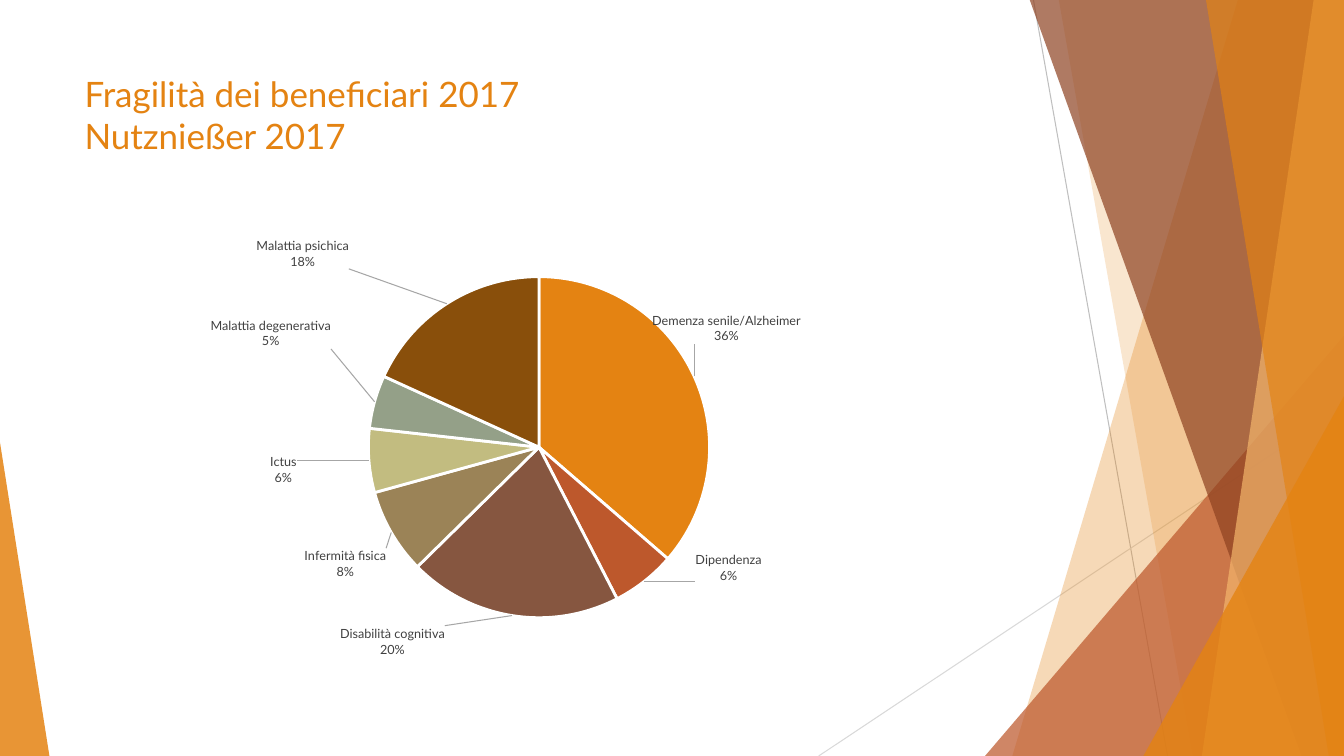
from dataclasses import dataclass

import pptx
import pptx.chart.data
import pptx.chart.series
import pptx.dml.color
import pptx.enum.chart
import pptx.enum.shapes
import pptx.enum.text
import pptx.oxml
import pptx.oxml.ns
import pptx.shapes.autoshape
import pptx.slide
import pptx.util
from pptx.util import Inches

W, H = 13.33, 7.5
FONT = "Lato"
ORANGE = "E48312"
TITLE = "Fragilità dei beneficiari 2017\vNutznießer 2017"
CHART_NS = pptx.oxml.ns.nsdecls("c", "a")


@dataclass
class Line:
    x1: float
    y1: float
    x2: float
    y2: float
    color: str


@dataclass
class Band:
    top_x: float
    bottom_x: float
    color: str
    opacity: int


@dataclass
class Triangle:
    left: float
    top: float
    width: float
    apex: float
    color: str
    opacity: int


@dataclass
class Slice:
    name: str
    value: int
    color: str
    dx: float
    dy: float


DECOR = [
    Line(10.25, 0, 11.58, H, "BFBFBF"),
    Line(W, 4.03, 8.12, H, "D9D9D9"),
    Band(12.28, 10.04, ORANGE, 30),
    Band(10.5, 11.83, ORANGE, 20),
    Triangle(9.77, 3.33, 3.56, 1, "BD582C", 72),
    Band(10.21, 12.91, "8E4221", 70),
    Band(13.03, 11.92, "F3B56C", 70),
    Band(11.96, 13.18, ORANGE, 65),
    Triangle(11.34, 3.93, 1.99, 1, ORANGE, 80),
    Triangle(0, 4.39, 0.49, 0, ORANGE, 85),
]

SLICES = [
    Slice("Demenza senile/Alzheimer", 36, ORANGE, -0.05, -0.07),
    Slice("Dipendenza", 6, "BD582C", 0.05, -0.08),
    Slice("Disabilità cognitiva", 20, "865640", -0.07, 0.01),
    Slice("Infermità fisica", 8, "9B8357", 0, 0.03),
    Slice("Ictus", 6, "C2BC80", -0.07, 0.02),
    Slice("Malattia degenerativa", 5, "94A088", -0.04, -0.12),
    Slice("Malattia psichica", 18, "894F0B", -0.1, -0.07),
]


def rgb(color: str) -> pptx.dml.color.RGBColor:
    return pptx.dml.color.RGBColor.from_string(color)


def xml(text: str):
    return pptx.oxml.parse_xml(text)


def set_font(font, size: float, color: str) -> None:
    font.name = FONT
    font.size = pptx.util.Pt(size)
    font.color.rgb = rgb(color)


def paint(sp: pptx.shapes.autoshape.Shape, color: str, opacity: int) -> None:
    sp.shadow.inherit = False
    sp.fill.solid()
    sp.fill.fore_color.rgb = rgb(color)
    sp.line.fill.background()
    alpha = f'<a:alpha {pptx.oxml.ns.nsdecls("a")} val="{opacity * 1000}"/>'
    sp._element.spPr.xpath("./a:solidFill/a:srgbClr")[0].append(xml(alpha))


def draw_line(s: pptx.slide.Slide, line: Line) -> None:
    cx = s.shapes.add_connector(
        pptx.enum.shapes.MSO_CONNECTOR.STRAIGHT,
        Inches(line.x1), Inches(line.y1), Inches(line.x2), Inches(line.y2))
    cx.line.color.rgb = rgb(line.color)
    cx.line.width = pptx.util.Pt(0.75)
    cx._element.spPr.append(xml(f'<a:effectLst {pptx.oxml.ns.nsdecls("a")}/>'))


def draw_band(s: pptx.slide.Slide, band: Band) -> None:
    top = Inches(-0.01)
    fb = s.shapes.build_freeform(Inches(band.top_x), top)
    fb.add_line_segments([(Inches(W), top), (Inches(W), Inches(H)),
                          (Inches(band.bottom_x), Inches(H))], close=True)
    paint(fb.convert_to_shape(), band.color, band.opacity)


def draw_triangle(s: pptx.slide.Slide, tri: Triangle) -> None:
    sp = s.shapes.add_shape(
        pptx.enum.shapes.MSO_SHAPE.ISOSCELES_TRIANGLE,
        Inches(tri.left), Inches(tri.top), Inches(tri.width), Inches(H - tri.top))
    sp.adjustments[0] = tri.apex
    paint(sp, tri.color, tri.opacity)


def draw_title(s: pptx.slide.Slide) -> None:
    tf = s.shapes.add_textbox(Inches(0.74), Inches(0.67), Inches(9.4), Inches(1.44)).text_frame
    tf.word_wrap = True
    tf.vertical_anchor = pptx.enum.text.MSO_ANCHOR.TOP
    tf.text = TITLE
    for r in tf.paragraphs[0].runs:
        set_font(r.font, 25, ORANGE)


def style_labels(series: pptx.chart.series.PieSeries) -> None:
    outside = pptx.enum.chart.XL_LABEL_POSITION.OUTSIDE_END
    labels = series.data_labels
    labels.show_value = False
    labels.show_category_name = True
    labels.show_percentage = True
    labels.number_format = "0%"
    labels.number_format_is_linked = False
    labels.position = outside
    set_font(labels.font, 9, "404040")
    for i, part in enumerate(SLICES):
        label = series.points[i].data_label
        set_font(label.font, 9, "404040")
        label.position = outside
    d_lbls = series._element.xpath("./c:dLbls")[0]
    for d_lbl, part in zip(d_lbls.xpath("./c:dLbl"), SLICES):
        d_lbl.insert(1, xml(
            f'<c:layout {CHART_NS}><c:manualLayout><c:x val="{part.dx}"/>'
            f'<c:y val="{part.dy}"/></c:manualLayout></c:layout>'))
        d_lbl.insert(2, xml(f'<c:numFmt {CHART_NS} formatCode="0%" sourceLinked="0"/>'))
        for tag, shown in (("showVal", "0"), ("showCatName", "1"), ("showPercent", "1")):
            d_lbl.xpath(f"./c:{tag}")[0].set("val", shown)
        d_lbl.append(xml(f"<c:separator {CHART_NS}>\n</c:separator>"))
    for old in d_lbls.xpath("./c:showLeaderLines"):
        d_lbls.remove(old)
    d_lbls.append(xml(f"<c:separator {CHART_NS}>\n</c:separator>"))
    d_lbls.append(xml(f'<c:showLeaderLines {CHART_NS} val="1"/>'))
    d_lbls.append(xml(
        f'<c:leaderLines {CHART_NS}><c:spPr><a:ln w="9525"><a:solidFill>'
        '<a:srgbClr val="A6A6A6"/></a:solidFill></a:ln></c:spPr></c:leaderLines>'))


def draw_pie(s: pptx.slide.Slide) -> None:
    data = pptx.chart.data.CategoryChartData()
    data.categories = [part.name for part in SLICES]
    data.add_series("Series 1", [part.value for part in SLICES])
    chart = s.shapes.add_chart(
        pptx.enum.chart.XL_CHART_TYPE.PIE,
        Inches(0.74), Inches(2.36), Inches(9.4), Inches(4.24), data).chart
    chart.has_title = False
    chart.has_legend = False
    set_font(chart.font, 10, "000000")
    plot = chart.plots[0]
    plot.vary_by_categories = True
    series = plot.series[0]
    for i, part in enumerate(SLICES):
        fmt = series.points[i].format
        fmt.fill.solid()
        fmt.fill.fore_color.rgb = rgb(part.color)
        fmt.line.color.rgb = rgb("FFFFFF")
        fmt.line.width = pptx.util.Pt(2)
    style_labels(series)
    area = chart._chartSpace.xpath(".//c:plotArea")[0]
    for old in area.xpath("./c:layout"):
        area.remove(old)
    box = "".join(f'<c:{tag} val="{val}"/>' for tag, val in (
        ("layoutTarget", "inner"), ("xMode", "edge"), ("yMode", "edge"),
        ("x", 0.31), ("y", 0.09), ("w", 0.36), ("h", 0.8)))
    area.insert(0, xml(f"<c:layout {CHART_NS}><c:manualLayout>{box}</c:manualLayout></c:layout>"))


def main() -> None:
    prs = pptx.Presentation()
    prs.slide_width, prs.slide_height = Inches(W), Inches(H)
    s = prs.slides.add_slide(prs.slide_layouts[6])
    draw = {Line: draw_line, Band: draw_band, Triangle: draw_triangle}
    for item in DECOR:
        draw[type(item)](s, item)
    draw_title(s)
    draw_pie(s)
    prs.save("out.pptx")


if __name__ == "__main__":
    main()
